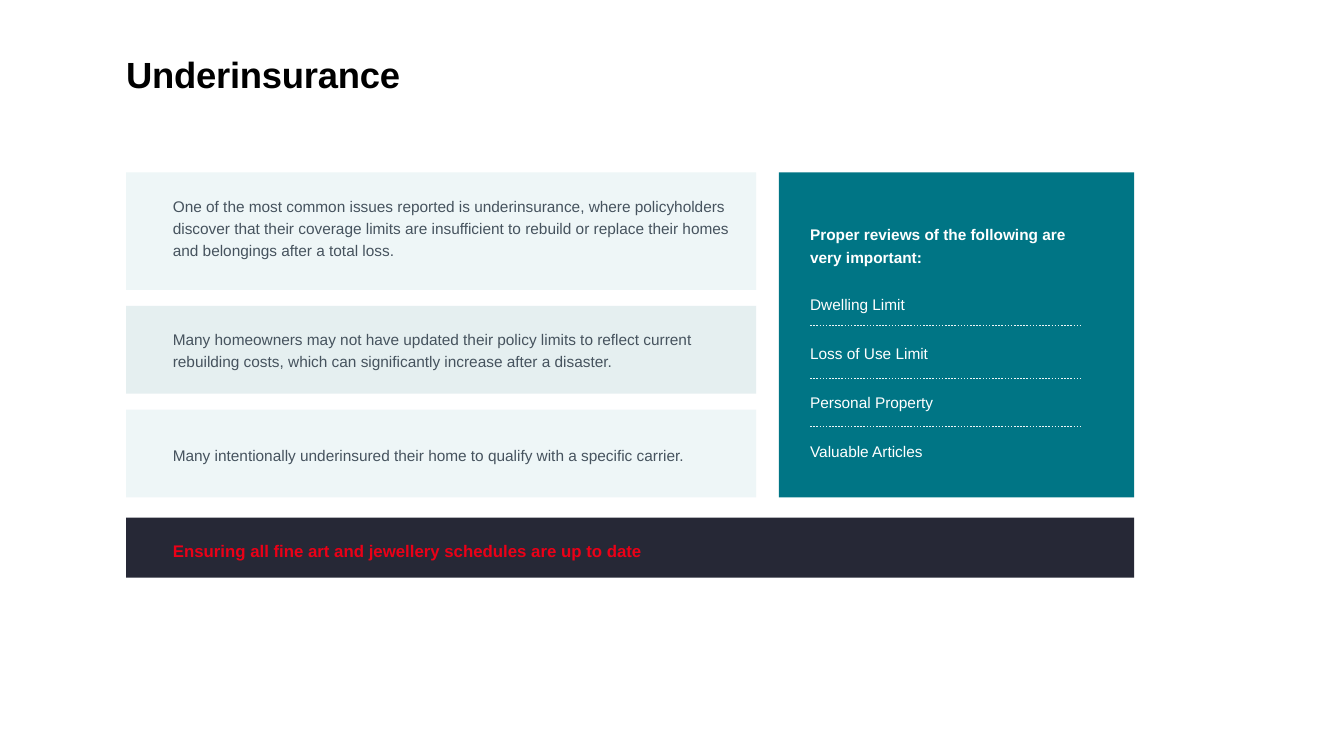
from lxml import etree
from pptx import Presentation
from pptx.dml.color import RGBColor
from pptx.enum.dml import MSO_LINE
from pptx.enum.shapes import MSO_CONNECTOR, MSO_SHAPE
from pptx.enum.text import MSO_ANCHOR, MSO_AUTO_SIZE, PP_ALIGN
from pptx.oxml.ns import qn
from pptx.util import Cm, Pt

RECT = MSO_SHAPE.RECTANGLE
LINE = MSO_CONNECTOR.STRAIGHT
DOTS = MSO_LINE.ROUND_DOT
LEFT = PP_ALIGN.LEFT
MIDDLE = MSO_ANCHOR.MIDDLE
FIT = MSO_AUTO_SIZE.SHAPE_TO_FIT_TEXT
FIXED = MSO_AUTO_SIZE.NONE

BLACK = RGBColor(0x00, 0x00, 0x00)
WHITE = RGBColor(0xFF, 0xFF, 0xFF)
PALE = RGBColor(0xEE, 0xF6, 0xF7)
MIST = RGBColor(0xE5, 0xEF, 0xF0)
SLATE = RGBColor(0x46, 0x53, 0x5E)
TEAL = RGBColor(0x00, 0x75, 0x85)
NAVY = RGBColor(0x26, 0x28, 0x36)
RED = RGBColor(0xEB, 0x00, 0x17)

EDGE = 6.35
TOP = 8.69
INSET = 8.46
WIDE = 29.01
GAP = 0.81
SIDE = 40.82

CARDS = [
    (5.92, PALE, 0.91, 3.58,
     "One of the most common issues reported is underinsurance, where "
     "policyholders discover that their coverage limits are insufficient to "
     "rebuild or replace their homes and belongings after a total loss."),
    (4.42, MIST, 0.91, 2.46,
     "Many homeowners may not have updated their policy limits to reflect "
     "current rebuilding costs, which can significantly increase after a "
     "disaster."),
    (4.42, PALE, 1.52, 1.32,
     "Many intentionally underinsured their home to qualify with a specific "
     "carrier."),
]
ITEMS = [
    ("Dwelling Limit", 6.81),
    ("Loss of Use Limit", 6.81),
    ("Personal Property", 8.94),
    ("Valuable Articles", 8.94),
]
RULES = [16.41, 19.08, 21.49]


class Deck:
    face = "Arial"
    size = 22

    def __init__(self, wide, high):
        self.show = Presentation()
        self.show.slide_width = Cm(wide)
        self.show.slide_height = Cm(high)
        self.slide = self.show.slides.add_slide(self.show.slide_layouts[5])

    def style(self, frame, words, color, size, bold, pad):
        frame.text = words
        frame.word_wrap = True
        if not pad:
            frame.margin_left = frame.margin_right = 0
            frame.margin_top = frame.margin_bottom = 0
        para = frame.paragraphs[0]
        para.alignment = LEFT
        font = para.runs[0].font
        font.name = self.face
        font.size = Pt(size)
        font.bold = bold
        font.color.rgb = color
        return para

    def title(self, words, left, top, wide, high):
        box = self.slide.shapes.title
        box.left, box.top = Cm(left), Cm(top)
        box.width, box.height = Cm(wide), Cm(high)
        frame = box.text_frame
        para = self.style(frame, words, BLACK, 52, True, False)
        frame.vertical_anchor = MIDDLE
        frame.auto_size = FIXED
        para.runs[0]._r.get_or_add_rPr().set("spc", "-30")

    def block(self, left, top, wide, high, fill):
        box = self.slide.shapes.add_shape(
            RECT, Cm(left), Cm(top), Cm(wide), Cm(high))
        box.shadow.inherit = False
        box.fill.solid()
        box.fill.fore_color.rgb = fill
        box.line.fill.background()

    def text(self, words, left, top, wide, high, color,
             size=size, bold=False, pad=True):
        box = self.slide.shapes.add_textbox(
            Cm(left), Cm(top), Cm(wide), Cm(high))
        para = self.style(box.text_frame, words, color, size, bold, pad)
        para.line_spacing = 1.2
        para.space_after = Pt(6)
        box.text_frame.auto_size = FIT

    def rule(self, left, top, wide):
        line = self.slide.shapes.add_connector(
            LINE, Cm(left), Cm(top), Cm(left + wide), Cm(top))
        line.line.color.rgb = PALE
        line.line.width = Pt(2.25)
        line.line.dash_style = DOTS
        etree.SubElement(line._element.spPr, qn("a:effectLst"))

    def save(self):
        self.show.save("out.pptx")


def main():
    deck = Deck(67.72, 38.1)
    deck.title("Underinsurance", EDGE, 2.59, 59.26, 2.24)

    top = TOP
    for high, fill, drop, tall, words in CARDS:
        deck.block(EDGE, top, 31.75, high, fill)
        deck.text(words, INSET, top + drop, WIDE, tall, SLATE)
        top += high + GAP

    deck.block(39.24, TOP, 17.91, 16.38, TEAL)
    deck.text("Proper reviews of the following are very important:",
              SIDE, 11.18, 14.22, 2.21, WHITE, bold=True, pad=False)
    for row, (words, wide) in enumerate(ITEMS):
        deck.text(words, SIDE, 14.68 + row * 2.48, wide, 1.07, WHITE,
                  pad=False)
    for level in RULES:
        deck.rule(SIDE, level, 13.66)

    deck.block(EDGE, 26.09, 50.8, 3.02, NAVY)
    deck.text("Ensuring all fine art and jewellery schedules are up to date",
              INSET, 26.92, WIDE, 1.42, RED, size=24, bold=True)
    deck.save()


if __name__ == "__main__":
    main()
